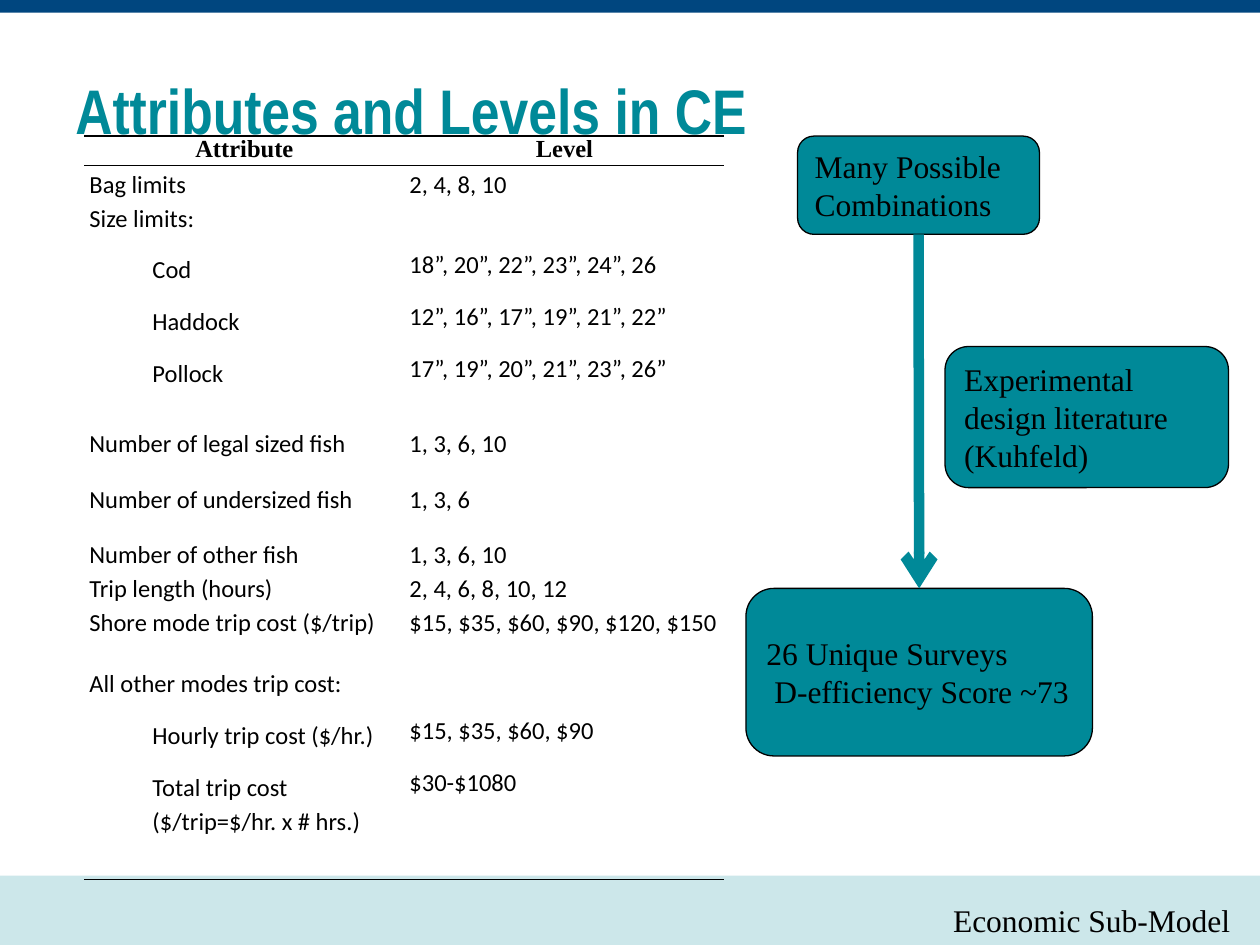
from lxml import etree
from pptx import Presentation
from pptx.dml.color import RGBColor
from pptx.enum.shapes import MSO_CONNECTOR, MSO_SHAPE
from pptx.enum.text import MSO_ANCHOR, PP_ALIGN
from pptx.oxml.ns import qn
from pptx.util import Inches, Pt

RECTANGLE, ROUNDED = MSO_SHAPE.RECTANGLE, MSO_SHAPE.ROUNDED_RECTANGLE
STRAIGHT = MSO_CONNECTOR.STRAIGHT
LEFT, CENTER = PP_ALIGN.LEFT, PP_ALIGN.CENTER
TOP, MIDDLE = MSO_ANCHOR.TOP, MSO_ANCHOR.MIDDLE
BOTTOM_SIDE, TOP_SIDE = 2, 0

COLORS = {"teal": "008998", "navy": "00467F", "pale": "CCE7EA", "black": "000000"}
SERIF, SANS, NARROW = "Times New Roman", "Calibri", "Arial Narrow"

# Each row: height, attribute lines, level lines; the first attribute line of a
# group is its heading, and the others are indented beneath it.
ROWS = [
    (0.22, ["Attribute"], ["Level"]),
    (0.24, ["Bag limits"], ["2, 4, 8, 10"]),
    (1.79, ["Size limits:", "Cod", "Haddock", "Pollock"],
     ["18”, 20”, 22”, 23”, 24”, 26", "12”, 16”, 17”, 19”, 21”, 22”",
      "17”, 19”, 20”, 21”, 23”, 26”"]),
    (0.44, ["Number of legal sized fish"], ["1, 3, 6, 10"]),
    (0.44, ["Number of undersized fish"], ["1, 3, 6"]),
    (0.24, ["Number of other fish"], ["1, 3, 6, 10"]),
    (0.24, ["Trip length (hours)"], ["2, 4, 6, 8, 10, 12"]),
    (0.49, ["Shore mode trip cost ($/trip)"], ["$15, $35, $60, $90, $120, $150"]),
    (1.70, ["All other modes trip cost:", "Hourly trip cost ($/hr.)",
            "Total trip cost ($/trip=$/hr. x # hrs.)"],
     ["$15, $35, $60, $90", "$30-$1080"]),
]
HEADING_HEIGHT = 0.37


def color(name):
    return RGBColor.from_string(COLORS[name])


def write(text_frame, lines, size=18, font=SERIF, ink="black", bold=False,
          align=LEFT, spacing=None, after=None, indent=0):
    """Write one paragraph per line; indent applies from the second line on."""
    for number, line in enumerate(lines):
        paragraph = text_frame.add_paragraph() if number else text_frame.paragraphs[0]
        paragraph.alignment = align
        if spacing:
            paragraph.line_spacing = spacing
        if after is not None:
            paragraph.space_after = Pt(after)
        if number and indent:
            properties = paragraph._p.get_or_add_pPr()
            properties.set("marL", str(Inches(indent)))
            properties.set("indent", "0")
        run = paragraph.add_run()
        run.text = line
        run.font.size, run.font.name, run.font.bold = Pt(size), font, bold
        run.font.color.rgb = color(ink)


def set_borders(cell, top, bottom):
    properties = cell._tc.get_or_add_tcPr()
    for tag, visible in (("lnL", False), ("lnR", False), ("lnT", top), ("lnB", bottom)):
        line = etree.SubElement(properties, qn(f"a:{tag}"), w=str(Pt(1)))
        if visible:
            fill = etree.SubElement(line, qn("a:solidFill"))
            etree.SubElement(fill, qn("a:srgbClr"), val=COLORS["black"])
        else:
            etree.SubElement(line, qn("a:noFill"))


class SlideBuilder:
    def __init__(self, slide):
        self.slide = slide

    def shape(self, kind, box, fill, lines=(), outline=False, wrap=True):
        shape = self.slide.shapes.add_shape(kind, *map(Inches, box))
        shape.shadow.inherit = False
        shape.fill.solid()
        shape.fill.fore_color.rgb = color(fill)
        if outline:
            shape.line.color.rgb = color("black")
            shape.line.width = Pt(0.75)
        else:
            shape.line.fill.background()
        if lines:
            shape.text_frame.word_wrap = wrap
            shape.text_frame.vertical_anchor = MIDDLE
            write(shape.text_frame, lines)
        return shape

    def text(self, box, line, anchor=TOP, **style):
        text_frame = self.slide.shapes.add_textbox(*map(Inches, box)).text_frame
        text_frame.word_wrap = True
        text_frame.vertical_anchor = anchor
        write(text_frame, [line], **style)

    def table(self, left, top, column_width, rows):
        height = sum(row[0] for row in rows)
        table = self.slide.shapes.add_table(
            len(rows), 2, Inches(left), Inches(top),
            Inches(2 * column_width), Inches(height)).table
        table.first_row = table.horz_banding = False
        for column in table.columns:
            column.width = Inches(column_width)
        for index, (row_height, attributes, levels) in enumerate(rows):
            table.rows[index].height = Inches(row_height)
            header = index == 0
            for cell, lines in zip(table.rows[index].cells, (attributes, levels)):
                set_borders(cell, top=index < 2, bottom=header or index == len(rows) - 1)
                cell.fill.background()
                cell.margin_left = cell.margin_right = Inches(0.04)
                # Levels of a group start level with its second attribute line
                beside_group = len(lines) < len(attributes)
                cell.margin_top = Inches(HEADING_HEIGHT if beside_group else 0)
                cell.margin_bottom = 0
                if header:
                    write(cell.text_frame, lines, size=14, bold=True, align=CENTER)
                else:
                    write(cell.text_frame, lines, size=14, font=SANS, spacing=1.15,
                          after=10, indent=0.5 if lines is attributes else 0)

    def arrow(self, start, end):
        connector = self.slide.shapes.add_connector(STRAIGHT, 0, 0, 0, 0)
        connector.begin_connect(start, BOTTOM_SIDE)
        connector.end_connect(end, TOP_SIDE)
        connector.line.color.rgb = color("teal")
        connector.line.width = Pt(6)
        etree.SubElement(connector.line._get_or_add_ln(), qn("a:tailEnd"), type="arrow")
        etree.SubElement(connector._element.spPr, qn("a:effectLst"))


def main():
    presentation = Presentation()
    presentation.slide_width, presentation.slide_height = Inches(10), Inches(7.5)
    builder = SlideBuilder(presentation.slides.add_slide(presentation.slide_layouts[6]))

    builder.shape(RECTANGLE, (0, 6.95, 10, 0.55), "pale")
    builder.shape(RECTANGLE, (0, 0, 10, 0.1), "navy")
    builder.text((0.5, 0.5, 9, 0.74), "Attributes and Levels in CE", anchor=MIDDLE,
                 size=36, font=NARROW, ink="teal", bold=True)
    builder.table(0.67, 1.08, 2.54, ROWS)
    builder.text((7.33, 7.1, 2.67, 0.4), "Economic Sub-Model", align=CENTER)

    combinations = builder.shape(ROUNDED, (6.33, 1.08, 1.92, 0.78), "teal",
                                 ["Many Possible Combinations"], outline=True)
    builder.shape(ROUNDED, (7.5, 2.75, 2.25, 1.12), "teal",
                  ["Experimental design literature (Kuhfeld)"], outline=True)
    surveys = builder.shape(ROUNDED, (5.92, 4.67, 2.75, 1.33), "teal",
                            ["26 Unique Surveys", " D-efficiency Score ~73"],
                            outline=True, wrap=False)
    builder.arrow(combinations, surveys)
    presentation.save("out.pptx")


if __name__ == "__main__":
    main()
